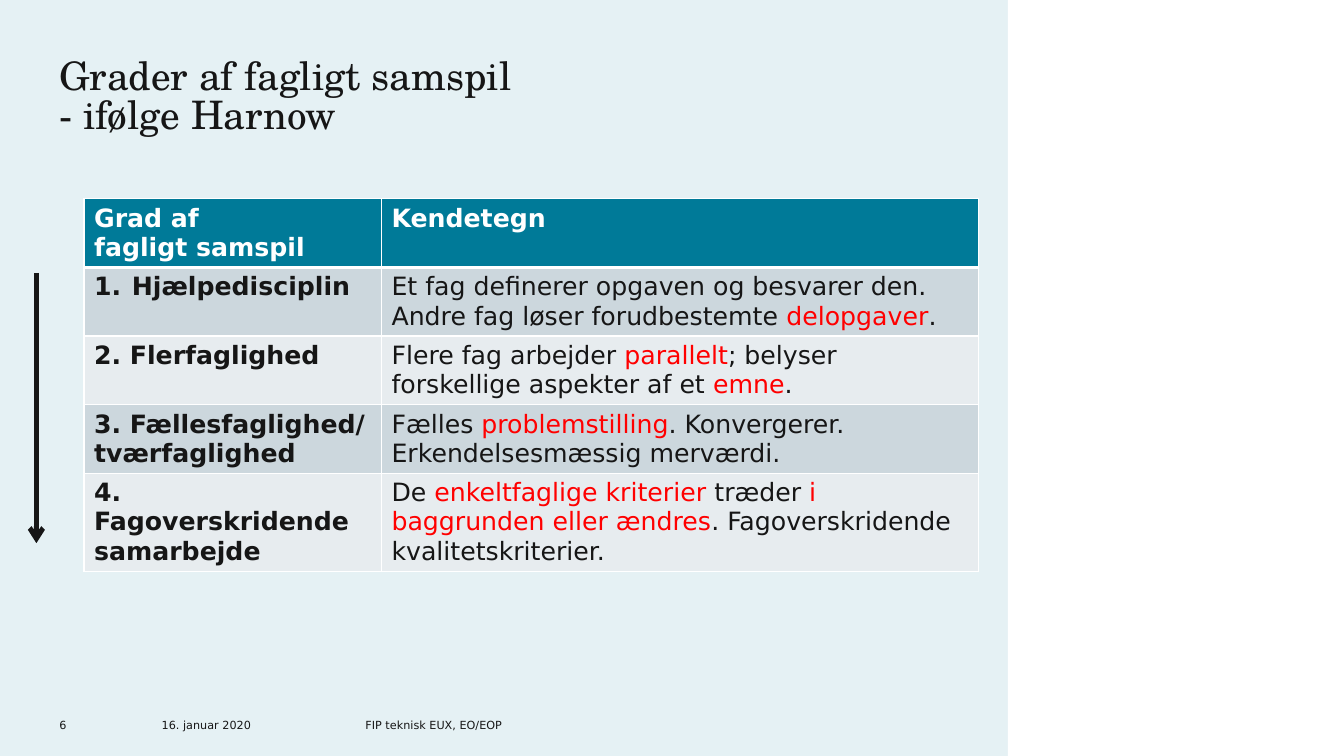
from lxml.etree import SubElement as Sub
from pptx import Presentation
from pptx.dml.color import RGBColor
from pptx.enum.shapes import MSO_CONNECTOR as Line, MSO_SHAPE as Shape
from pptx.enum.text import MSO_ANCHOR as Anchor, MSO_AUTO_SIZE as Fit, PP_ALIGN as Align
from pptx.oxml import parse_xml
from pptx.oxml.ns import nsdecls, qn
from pptx.util import Pt

INK = RGBColor(0x16, 0x16, 0x16)
RED = RGBColor(0xFF, 0x00, 0x00)
WHITE = RGBColor(0xFF, 0xFF, 0xFF)
ICE = RGBColor(0xE5, 0xF1, 0xF4)
TEAL = RGBColor(0x00, 0x7A, 0x98)
BANDS = RGBColor(0xCC, 0xD7, 0xDD), RGBColor(0xE7, 0xEC, 0xEF)
SANS, SERIF = "DejaVu Sans", "TeX Gyre Schola"

TITLE = ["Grader af fagligt samspil", "- ifølge Harnow"]
HEAD = [["Grad af", "fagligt samspil"], ["Kendetegn"]]
# Every second piece of a text is red.
GRADES = [
    ("Hjælpedisciplin",
     ["Et fag definerer opgaven og besvarer den. Andre fag løser forudbestemte ", "delopgaver", "."]),
    ("2. Flerfaglighed",
     ["Flere fag arbejder ", "parallelt", "; belyser forskellige aspekter af et ", "emne", "."]),
    ("3. Fællesfaglighed/ tværfaglighed",
     ["Fælles ", "problemstilling", ". Konvergerer. Erkendelsesmæssig merværdi."]),
    ("4. Fagoverskridende samarbejde",
     ["De ", "enkeltfaglige kriterier ", "træder ", "i baggrunden eller ændres",
      ". Fagoverskridende kvalitetskriterier."]),
]
FOOTER = [("6", 42.5, 22), ("16. januar 2020", 115.5, 100), ("FIP teknisk EUX, EO/EOP", 261, 343)]
COLS = [212.5, 426.5]
ROWS = [49, 49, 49, 49, 70]


def add_run(para, text, size, color, bold=False, face=SANS):
    run = para.add_run()
    run.text = text
    font = run.font
    font.name, font.size, font.bold = face, Pt(size), bold
    font.color.rgb = color


def clear_box(frame, anchor):
    frame.margin_left = frame.margin_right = frame.margin_top = frame.margin_bottom = 0
    frame.word_wrap = True
    frame.auto_size = Fit.NONE
    frame.vertical_anchor = anchor


def style_cell(cell, fill, top, base):
    cell.margin_left = cell.margin_right = Pt(7.2)
    cell.margin_top = cell.margin_bottom = Pt(3.6)
    cell.fill.solid()
    cell.fill.fore_color.rgb = fill
    props = cell._tc.get_or_add_tcPr()
    for i, (side, width) in enumerate(zip("LRTB", (1, 1, top, base))):
        props.insert(i, parse_xml(
            f'<a:ln{side} {nsdecls("a")} w="{Pt(width)}"><a:solidFill>'
            f'<a:srgbClr val="{WHITE}"/></a:solidFill></a:ln{side}>'))


def add_title(slide):
    title = slide.shapes.title
    title.left, title.top, title.width, title.height = Pt(42.5), Pt(42.5), Pt(656), Pt(73.5)
    clear_box(title.text_frame, Anchor.TOP)
    para = title.text_frame.paragraphs[0]
    para.alignment = Align.LEFT
    para.line_spacing = 0.83
    add_run(para, TITLE[0], 28, INK, face=SERIF)
    para.add_line_break()
    add_run(para, TITLE[1], 28, INK, face=SERIF)


def add_grades(slide):
    frame = slide.shapes.add_table(len(ROWS), len(COLS), Pt(60), Pt(142), Pt(sum(COLS)), Pt(sum(ROWS)))
    table = frame.table
    for col, width in zip(table.columns, COLS):
        col.width = Pt(width)
    for row, height in zip(table.rows, ROWS):
        row.height = Pt(height)
    for c, lines in enumerate(HEAD):
        cell = table.cell(0, c)
        style_cell(cell, TEAL, 1, 3)
        for i, line in enumerate(lines):
            para = cell.text_frame.add_paragraph() if i else cell.text_frame.paragraphs[0]
            add_run(para, line, 18, WHITE, True)
    for r, (name, parts) in enumerate(GRADES, 1):
        for c in range(2):
            style_cell(table.cell(r, c), BANDS[(r - 1) % 2], 3 if r == 1 else 1, 1)
        label, text = (table.cell(r, c).text_frame.paragraphs[0] for c in range(2))
        if r == 1:
            props = label._p.get_or_add_pPr()
            props.set("marL", str(Pt(27)))
            props.set("indent", str(Pt(-27)))
            Sub(props, qn("a:buFont"), typeface="+mj-lt")
            Sub(props, qn("a:buAutoNum"), type="arabicPeriod")
        add_run(label, name, 18, INK, True)
        for i, part in enumerate(parts):
            add_run(text, part, 18, RED if i % 2 else INK)


def add_arrow(slide):
    arrow = slide.shapes.add_connector(Line.STRAIGHT, Pt(26), Pt(195), Pt(26), Pt(388))
    arrow.line.color.rgb = INK
    arrow.line.width = Pt(3.5)
    Sub(arrow.line._get_or_add_ln(), qn("a:tailEnd"), type="arrow")
    Sub(arrow._element.spPr, qn("a:effectLst"))


def main():
    deck = Presentation()
    deck.slide_width, deck.slide_height = Pt(960), Pt(540)
    slide = deck.slides.add_slide(deck.slide_layouts[5])
    slide.background.fill.solid()
    slide.background.fill.fore_color.rgb = ICE
    panel = slide.shapes.add_shape(Shape.RECTANGLE, Pt(720), 0, Pt(240), Pt(540))
    panel.shadow.inherit = False
    panel.fill.solid()
    panel.fill.fore_color.rgb = WHITE
    panel.line.fill.background()
    add_title(slide)
    add_grades(slide)
    add_arrow(slide)
    for text, left, width in FOOTER:
        box = slide.shapes.add_textbox(Pt(left), Pt(508), Pt(width), Pt(14.5))
        clear_box(box.text_frame, Anchor.BOTTOM)
        add_run(box.text_frame.paragraphs[0], text, 8, INK)
    deck.save("out.pptx")


if __name__ == "__main__":
    main()
